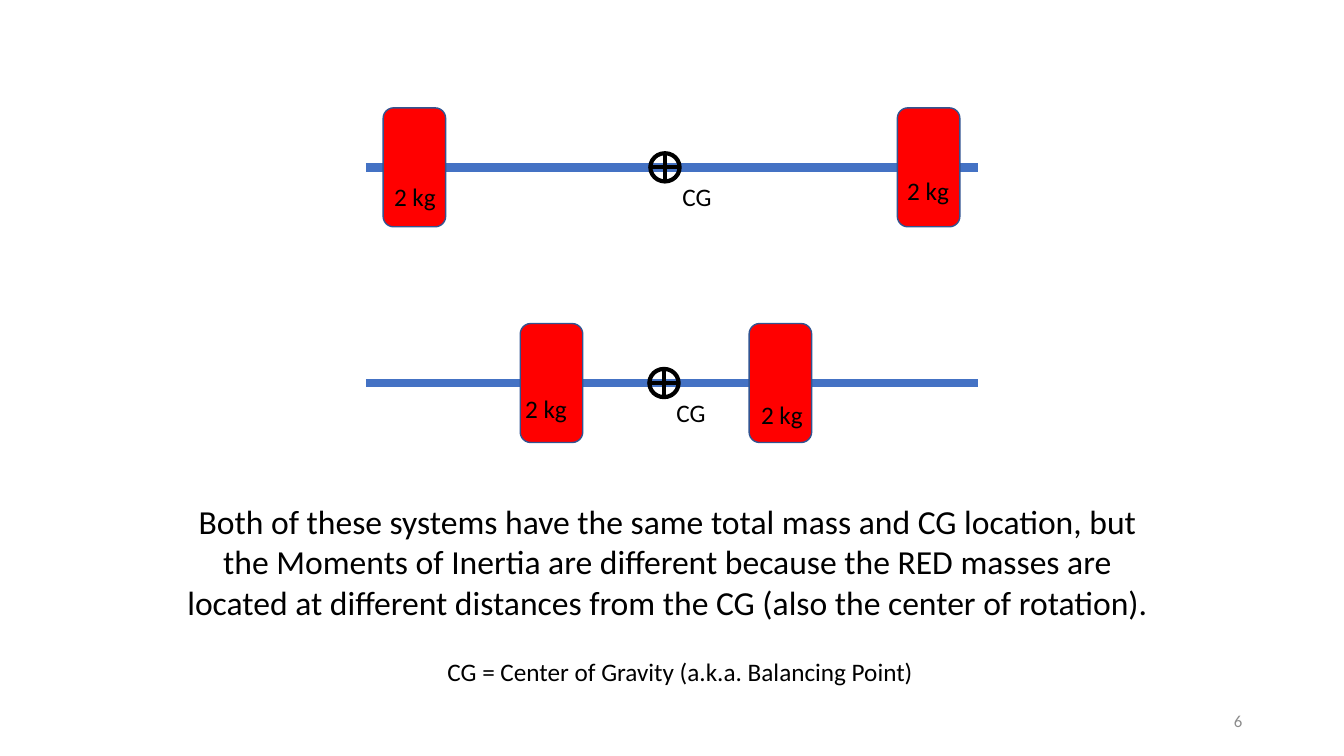
from dataclasses import dataclass

from lxml import etree
from pptx import Presentation
from pptx import util as u
from pptx.dml.color import RGBColor
from pptx.enum import shapes, text
from pptx.oxml.ns import qn


@dataclass(frozen=True)
class Theme:
    font: str = "Calibri"
    ink: str = "000000"
    muted: str = "8C8C8C"
    rod: str = "4472C4"
    mass: str = "FF0000"
    mass_edge: str = "325491"
    body_size: int = 24
    label_size: int = 18
    number_size: int = 12


def write_text(frame, content, *, font, size, color,
               align=text.PP_ALIGN.LEFT, anchor=text.MSO_ANCHOR.TOP, grow=True):
    frame.word_wrap = True
    frame.vertical_anchor = anchor
    if grow:
        frame.auto_size = text.MSO_AUTO_SIZE.SHAPE_TO_FIT_TEXT
    paragraph = frame.paragraphs[0]
    paragraph.alignment = align
    run = paragraph.add_run()
    run.text = content
    run.font.name = font
    run.font.size = u.Pt(size)
    run.font.color.rgb = RGBColor.from_string(color)


class SlideBuilder:
    def __init__(self, slide, theme):
        self.slide = slide
        self.theme = theme

    def label(self, content, box, parent=None, size=None, color=None, **layout):
        parent = parent or self.slide
        shape = parent.shapes.add_textbox(*map(u.Inches, box))
        write_text(shape.text_frame, content, font=self.theme.font,
                   size=size or self.theme.label_size,
                   color=color or self.theme.ink, **layout)

    def rod(self, group, left, right, y):
        line = group.shapes.add_connector(
            shapes.MSO_CONNECTOR.STRAIGHT,
            u.Inches(left), u.Inches(y), u.Inches(right), u.Inches(y))
        line.line.color.rgb = RGBColor.from_string(self.theme.rod)
        line.line.width = u.Pt(6)
        properties = line._element.spPr
        etree.SubElement(properties, qn("a:effectLst"))

    def outlined(self, group, kind, box, edge, weight, fill=None):
        shape = group.shapes.add_shape(kind, *map(u.Inches, box))
        shape.shadow.inherit = False
        if fill:
            shape.fill.solid()
            shape.fill.fore_color.rgb = RGBColor.from_string(fill)
        else:
            shape.fill.background()
        shape.line.color.rgb = RGBColor.from_string(edge)
        shape.line.width = u.Pt(weight)

    def balance(self, y, mass_lefts, center_left, center_label, mass_labels):
        """Draw a rod at height y with two masses and its center of gravity."""
        group = self.slide.shapes.add_group_shape()
        self.rod(group, 3.63, 9.7, y)
        for left in mass_lefts:
            self.outlined(group, shapes.MSO_SHAPE.ROUNDED_RECTANGLE,
                          (left, y - 0.59, 0.62, 1.18),
                          self.theme.mass_edge, 1, self.theme.mass)
        self.outlined(group, shapes.MSO_SHAPE.FLOWCHART_OR,
                      (center_left, y - 0.14, 0.29, 0.28), self.theme.ink, 3)
        self.label("CG", (*center_label, 1.01, 0.4), group)
        for position in mass_labels:
            self.label("2 kg", (*position, 0.63, 0.4), group)


def main():
    presentation = Presentation()
    presentation.slide_width = u.Inches(13.33)
    presentation.slide_height = u.Inches(7.5)
    slide = presentation.slides.add_slide(presentation.slide_layouts[6])
    theme = Theme()
    builder = SlideBuilder(slide, theme)

    # Slide number
    builder.label("6", (9.42, 6.95, 3, 0.4), size=theme.number_size,
                  color=theme.muted, align=text.PP_ALIGN.RIGHT,
                  anchor=text.MSO_ANCHOR.MIDDLE, grow=False)

    # Masses far from the center, then close to it
    builder.balance(1.66, mass_lefts=(3.8, 8.9), center_left=6.45,
                    center_label=(6.67, 1.75),
                    mass_labels=((8.9, 1.69), (3.81, 1.75)))
    builder.balance(3.8, mass_lefts=(5.16, 7.43), center_left=6.44,
                    center_label=(6.61, 3.89),
                    mass_labels=((5.11, 3.85), (7.45, 3.91)))

    # Explanation and abbreviation
    builder.label(
        "Both of these systems have the same total mass and CG location, but "
        "the Moments of Inertia are different because the RED masses are "
        "located at different distances from the CG (also the center of rotation).",
        (1.62, 4.92, 10, 1.31), size=theme.body_size, align=text.PP_ALIGN.CENTER)
    builder.label("CG = Center of Gravity (a.k.a. Balancing Point)",
                  (4.34, 6.46, 5, 0.4))

    presentation.save("out.pptx")


if __name__ == "__main__":
    main()
